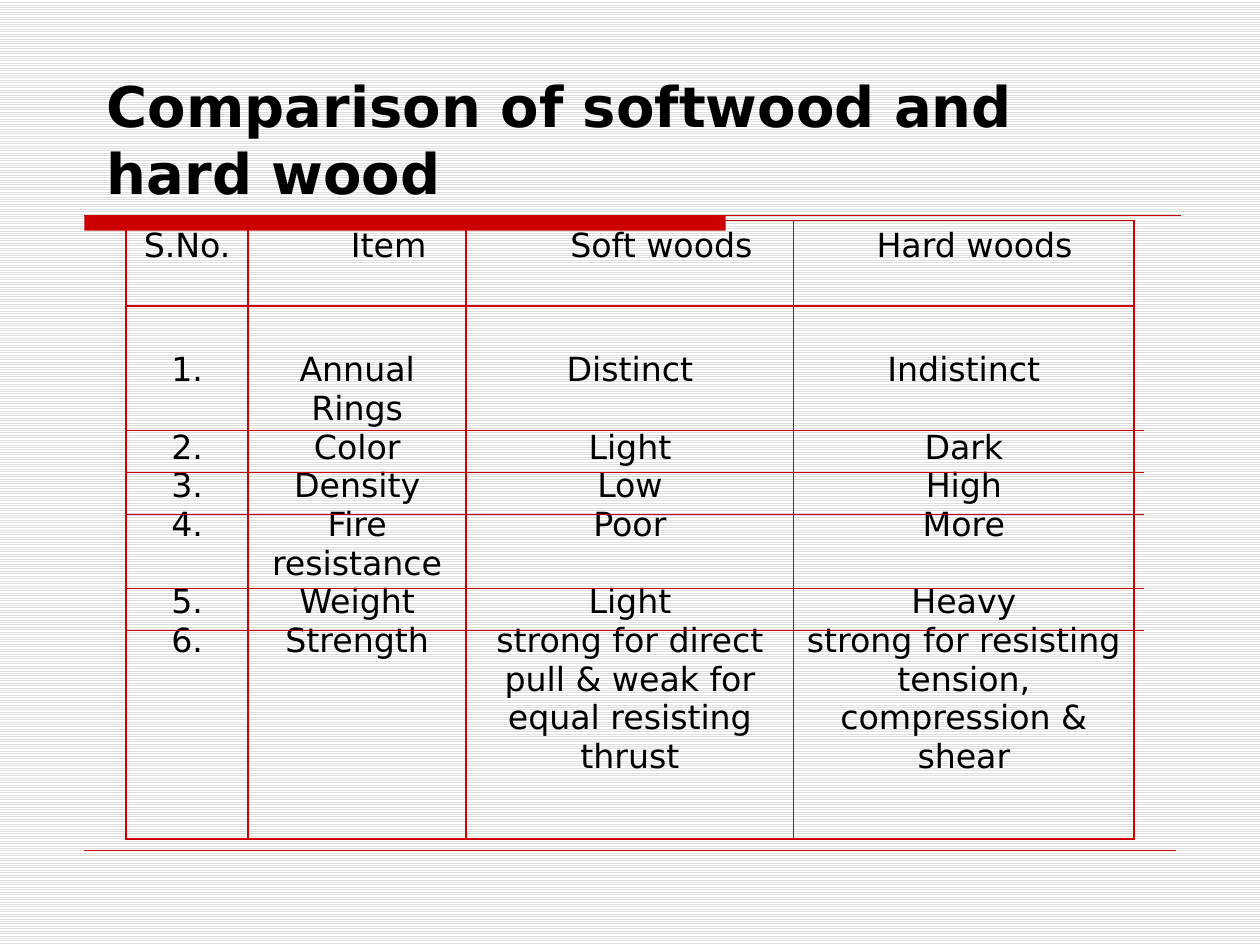
from lxml import etree
from pptx import Presentation
from pptx import util as u
from pptx.dml.color import RGBColor
from pptx.enum import dml, shapes, text
from pptx.oxml.ns import qn

WIDTH, HEIGHT = 10, 7.5
FONT, RED, BLACK = "DejaVu Sans", "CC0000", "000000"
BODY_SIZE = 19
BLANK_LINE = 22.1
INSET = 0.05
COLUMNS = [0.97, 1.73, 2.6, 2.7]
ROWS = [0.68, 4.23]
TABLE_LEFT, TABLE_TOP = 1, 1.75
HEADERS = [("S.No.", 0), ("Item", 0.5), ("Soft woods", 0.5), ("Hard woods", 0.17)]
PROPERTIES = [
    ("1.", "Annual Rings", "Distinct", "Indistinct"),
    ("2.", "Color", "Light", "Dark"),
    ("3.", "Density", "Low", "High"),
    ("4.", "Fire resistance", "Poor", "More"),
    ("5.", "Weight", "Light", "Heavy"),
    ("6.", "Strength", "strong for direct pull & weak for equal resisting thrust",
     "strong for resisting tension, compression & shear"),
]
TWO_LINE_ROWS = (0, 3)
ITEM_COLUMN = 1
RULES = [3.42, 3.75, 4.08, 4.67, 5]


def color(value):
    """Turn a hex string into a colour."""
    return RGBColor.from_string(value)


def write(para, words, size=BODY_SIZE, bold=False, align=text.PP_ALIGN.CENTER, after=0):
    """Put formatted words into a paragraph."""
    para.alignment = align
    para.space_after = u.Pt(after)
    span = para.add_run()
    span.text = words
    span.font.name = FONT
    span.font.size = u.Pt(size)
    span.font.bold = bold
    span.font.color.rgb = color(BLACK)


def add_rule(page, left, right, top, width):
    """Draw a horizontal red line."""
    line = page.shapes.add_connector(
        shapes.MSO_CONNECTOR.STRAIGHT,
        u.Inches(left), u.Inches(top), u.Inches(right), u.Inches(top))
    line.line.color.rgb = color(RED)
    line.line.width = u.Pt(width)
    etree.SubElement(line._element.spPr, qn("a:effectLst"))


def add_bar(page, left, top, width, height):
    """Draw the solid bar below the title."""
    bar = page.shapes.add_shape(
        shapes.MSO_SHAPE.RECTANGLE,
        u.Inches(left), u.Inches(top), u.Inches(width), u.Inches(height))
    bar.shadow.inherit = False
    bar.fill.solid()
    bar.fill.fore_color.rgb = color(RED)
    bar.line.fill.background()


def add_title(page, words):
    """Add the bold slide title."""
    box = page.shapes.add_textbox(
        u.Inches(0.075 * WIDTH), u.Inches(0.5), u.Inches(8.17), u.Inches(1.18))
    frame = box.text_frame
    frame.word_wrap = True
    frame.vertical_anchor = text.MSO_ANCHOR.BOTTOM
    write(frame.paragraphs[0], words, size=32, bold=True, align=text.PP_ALIGN.LEFT)


def style_cell(cell):
    """Give a cell red borders and no fill."""
    props = cell._tc.get_or_add_tcPr()
    for side in ("lnL", "lnR", "lnT", "lnB"):
        edge = etree.SubElement(props, qn("a:" + side), w=str(u.Pt(1)))
        fill = etree.SubElement(edge, qn("a:solidFill"))
        etree.SubElement(fill, qn("a:srgbClr"), val=RED)
    cell.fill.background()


def add_comparison(page):
    """Add the table with a header row and one tall body row."""
    table = page.shapes.add_table(
        len(ROWS), len(COLUMNS), u.Inches(TABLE_LEFT), u.Inches(TABLE_TOP),
        u.Inches(sum(COLUMNS)), u.Inches(sum(ROWS))).table
    table.first_row = table.horz_banding = False
    for row, height in zip(table.rows, ROWS):
        row.height = u.Inches(height)
    for index, width in enumerate(COLUMNS):
        table.columns[index].width = u.Inches(width)
        header, body = table.cell(0, index), table.cell(1, index)
        style_cell(header)
        style_cell(body)
        words, shift = HEADERS[index]
        header.margin_left = u.Inches(0.1 + shift)
        write(header.text_frame.paragraphs[0], words)
        body.margin_top = u.Inches(INSET) + u.Pt(BLANK_LINE)
        for number, entry in enumerate(PROPERTIES):
            frame = body.text_frame
            para = frame.add_paragraph() if number else frame.paragraphs[0]
            gap = number in TWO_LINE_ROWS and index != ITEM_COLUMN
            write(para, entry[index], after=BLANK_LINE if gap else 0)


def main():
    """Build and save the slide."""
    deck = Presentation()
    deck.slide_width, deck.slide_height = u.Inches(WIDTH), u.Inches(HEIGHT)
    page = deck.slides.add_slide(deck.slide_layouts[6])
    backdrop = page.background.fill
    backdrop.patterned()
    backdrop.pattern = dml.MSO_PATTERN.LIGHT_HORIZONTAL
    backdrop.fore_color.rgb = color("DDDDDD")
    backdrop.back_color.rgb = color("FFFFFF")
    add_bar(page, 0.67, 1.71, 5.09, 0.12)
    add_rule(page, 0.67, 9.37, 1.71, 0.75)
    add_rule(page, 0.67, 9.33, 0.9 * HEIGHT, 0.25)
    add_title(page, "Comparison of softwood and hard wood")
    add_comparison(page)
    for top in RULES:
        add_rule(page, TABLE_LEFT, 9.08, top, 0.5)
    deck.save("out.pptx")


main()
